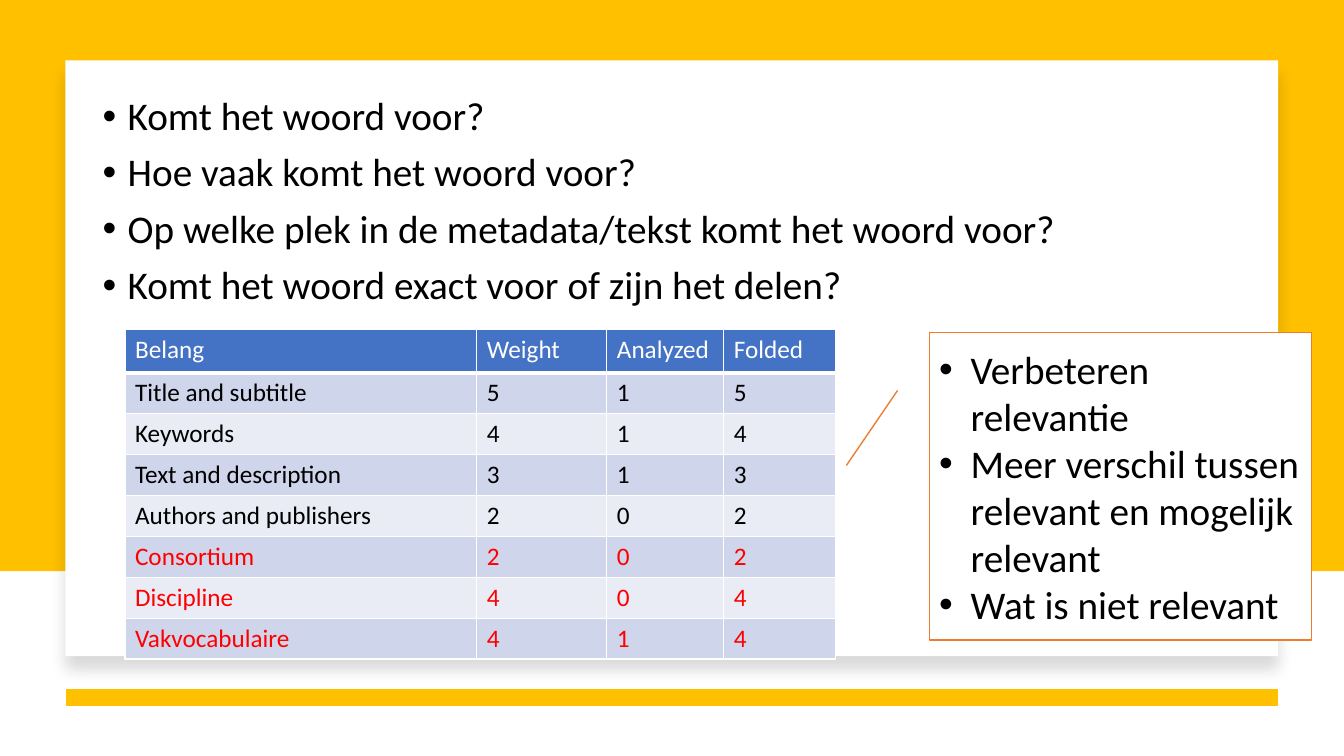
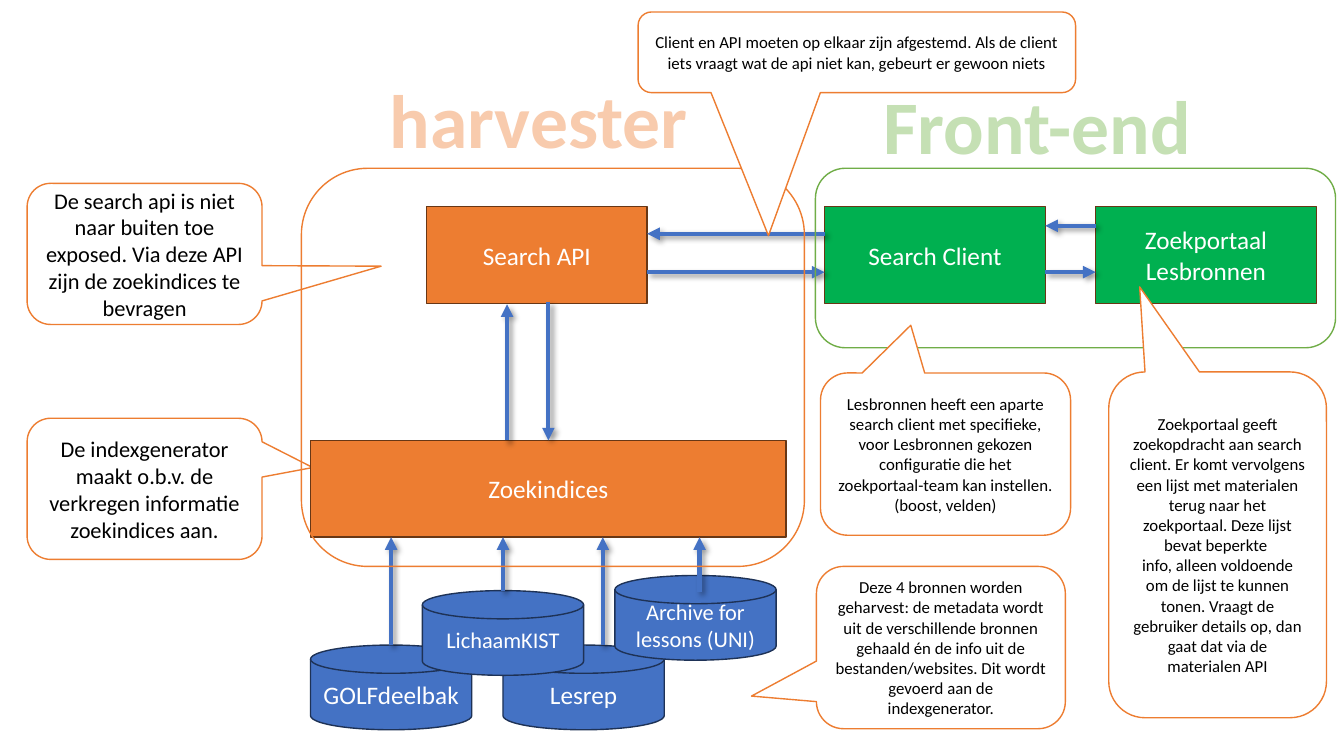
from lxml.etree import SubElement
from pptx import Presentation
from pptx.dml.color import RGBColor
from pptx.enum.shapes import MSO_CONNECTOR, MSO_SHAPE
from pptx.enum.text import MSO_ANCHOR, PP_ALIGN
from pptx.oxml import parse_xml
from pptx.oxml.ns import nsdecls, qn
from pptx.util import Pt

FONT = "Calibri"
BLACK = RGBColor(0, 0, 0)
WHITE = RGBColor(255, 255, 255)
RED = RGBColor(255, 0, 0)
GOLD = RGBColor(0xFF, 0xC0, 0x00)
BLUE = RGBColor(0x44, 0x72, 0xC4)
NAVY = RGBColor(0x1E, 0x32, 0x56)
ORANGE = RGBColor(0xED, 0x7D, 0x31)
BROWN = RGBColor(0x68, 0x37, 0x15)
GREEN = RGBColor(0x00, 0xB0, 0x50)
LEAF = RGBColor(0x70, 0xAD, 0x47)
PEACH = RGBColor(0xF8, 0xCB, 0xAD)
MINT = RGBColor(0xC5, 0xE0, 0xB4)
BANDS = (RGBColor(0xCF, 0xD5, 0xEA), RGBColor(0xE9, 0xEB, 0xF5))

ASKS = ["Komt het woord voor?", "Hoe vaak komt het woord voor?",
        "Op welke plek in de metadata/tekst komt het woord voor?",
        "Komt het woord exact voor of zijn het delen?"]
GOALS = ["Verbeteren relevantie",
         "Meer verschil tussen relevant en mogelijk relevant",
         "Wat is niet relevant"]
COLS = (251.3, 92.9, 83.5, 79.9)
ROWS = [("Belang", "Weight", "Analyzed", "Folded"),
        ("Title and subtitle", 5, 1, 5),
        ("Keywords", 4, 1, 4),
        ("Text and description", 3, 1, 3),
        ("Authors and publishers", 2, 0, 2),
        ("Consortium", 2, 0, 2),
        ("Discipline", 4, 0, 4),
        ("Vakvocabulaire", 4, 1, 4)]
HEAD_H, ROW_H = 31, 29.2
FIRST_RED = 5

BACK = [
    ("Deze 4 bronnen worden geharvest: de metadata wordt uit de verschillende "
     "bronnen gehaald én de info uit de bestanden/websites. Dit wordt gevoerd "
     "aan de indexgenerator.",
     (583.2, 404.6, 177.8, 115.9), (-0.761, 0.299), 12),
    ("De search api is niet naar buiten toe exposed. Via deze API zijn de "
     "zoekindices te bevragen",
     (19.4, 131, 167.8, 100.8), (1.007, 0.087), 16),
    ("De indexgenerator maakt o.b.v. de verkregen informatie zoekindices aan.",
     (19.4, 298.8, 167.8, 100.8), (0.716, -0.151), 16)]
FRONT = [
    ("Lesbronnen heeft een aparte search client met specifieke, voor Lesbronnen "
     "gekozen configuratie die het zoekportaal-team kan instellen. "
     "(boost, velden)",
     (586.1, 266.4, 178.6, 115.9), (-0.139, -0.794), 12),
    ("Zoekportaal geeft zoekopdracht aan search client. Er komt vervolgens een "
     "lijst met materialen terug naar het zoekportaal. Deze lijst bevat beperkte "
     "\vinfo, alleen voldoende om de lijst te kunnen tonen. Vraagt de gebruiker "
     "details op, dan gaat dat via de materialen API",
     (792, 265.7, 155.5, 247), (-0.358, -0.746), 12),
    ("Client en API moeten op elkaar zijn afgestemd. Als de client iets vraagt "
     "wat de api niet kan, gebeurt er gewoon niets",
     (455.8, 8.6, 312.5, 57.6), (-0.202, 2.274), 12)]
DISKS = [("GOLFdeelbak", 221.8, 460.8, 18), ("Lesrep", 359.3, 460.8, 18),
         ("LichaamKIST", 301.7, 421.9, 16),
         ("Archive for lessons (UNI)", 439.2, 411.1, 16)]
BOX_TOP, BOX_W, BOX_H = 147.6, 157.7, 69.1
INDEX = (221.8, 314.6, 339.8, BOX_H)
API_X, CLIENT_X, PORTAL_X = 304.6, 589, 782.6
BOXES = [("Zoekindices", INDEX, ORANGE),
         ("Search API", (API_X, BOX_TOP, BOX_W, BOX_H), ORANGE),
         ("Search Client", (CLIENT_X, BOX_TOP, BOX_W, BOX_H), GREEN),
         ("Zoekportaal Lesbronnen", (PORTAL_X, BOX_TOP, BOX_W, BOX_H), GREEN)]
FEEDS = [(279.4, 460.8), (430.6, 460.8), (359.3, 421.9), (499.7, 422.6)]
ZONES = [("harvester", (215.3, 120.2, 359.3, 284.4), ORANGE,
          (270, 48.2, 229.7, 72.7), PEACH, ORANGE),
         ("Front-end", (582.5, 120.2, 371.5, 128.2), LEAF,
          (622.1, 52.6, 237.6, 72.7), MINT, GREEN)]


def solid(tag, width, color):
    return parse_xml(f'<a:{tag} {nsdecls("a")} w="{int(Pt(width))}"><a:solidFill>'
                     f'<a:srgbClr val="{color}"/></a:solidFill></a:{tag}>')


def shade(item, alpha, blur, dist, angle):
    old = item._element.spPr.find(qn("a:effectLst"))
    if old is not None:
        item._element.spPr.remove(old)
    item._element.spPr.append(parse_xml(
        f'<a:effectLst {nsdecls("a")}><a:outerShdw blurRad="{int(Pt(blur))}" '
        f'dist="{int(Pt(dist))}" dir="{angle * 60000}" algn="ctr" rotWithShape="0">'
        f'<a:srgbClr val="000000"><a:alpha val="{alpha * 1000}"/></a:srgbClr>'
        '</a:outerShdw></a:effectLst>'))


def write(frame, text, size=18, color=BLACK, bold=False, align=PP_ALIGN.LEFT,
          indent=0, lead=None, gap=None, edge=None):
    lines = [text] if isinstance(text, str) else text
    for i, line in enumerate(lines):
        para = frame.add_paragraph() if i else frame.paragraphs[0]
        para.text = line
        para.alignment = align
        if lead:
            para.line_spacing = lead
        if gap:
            para.space_before = Pt(gap)
        if indent:
            props = para._p.get_or_add_pPr()
            props.set("marL", str(int(Pt(indent))))
            props.set("indent", str(-int(Pt(indent))))
            SubElement(props, qn("a:buFont")).set("typeface", "Arial")
            SubElement(props, qn("a:buChar")).set("char", "•")
        for run in para.runs:
            font = run.font
            font.name, font.size, font.bold = FONT, Pt(size), bold
            font.color.rgb = color
            if edge:
                run._r.get_or_add_rPr().insert(0, solid("ln", 1.75, edge))


def shape(slide, kind, box, fill=None, line=None, text=None, adj=(), **style):
    item = slide.shapes.add_shape(kind, *map(Pt, box))
    item.shadow.inherit = False
    for i, val in enumerate(adj):
        item.adjustments[i] = val
    if fill is None:
        item.fill.background()
    else:
        item.fill.solid()
        item.fill.fore_color.rgb = fill
    if line is None:
        item.line.fill.background()
    else:
        item.line.color.rgb = line
        item.line.width = Pt(1)
    if text:
        item.text_frame.word_wrap = True
        item.text_frame.vertical_anchor = MSO_ANCHOR.MIDDLE
        write(item.text_frame, text, **style)
    return item


def label(slide, box, text, wrap=True, **style):
    frame = slide.shapes.add_textbox(*map(Pt, box)).text_frame
    frame.word_wrap = wrap
    write(frame, text, **style)


def rule(slide, ends, color, width):
    item = slide.shapes.add_connector(MSO_CONNECTOR.STRAIGHT, *map(Pt, ends))
    item.line.color.rgb = color
    item.line.width = Pt(width)
    SubElement(item._element.spPr, qn("a:effectLst"))
    return item


def arrow(slide, *ends):
    item = rule(slide, ends, BLUE, 3)
    SubElement(item.line._get_or_add_ln(), qn("a:tailEnd")).set("type", "triangle")
    shade(item, 40, 4, 3, 45)
    return item


def notes(slide, items):
    for text, box, tip, size in items:
        shape(slide, MSO_SHAPE.ROUNDED_RECTANGULAR_CALLOUT, box, WHITE, ORANGE,
              text, adj=tip, size=size, align=PP_ALIGN.CENTER)


def grid(slide):
    high = HEAD_H + ROW_H * (len(ROWS) - 1)
    item = slide.shapes.add_table(len(ROWS), len(COLS), Pt(89.3), Pt(235.4),
                                  Pt(sum(COLS)), Pt(high))
    table = item.table
    table.first_row = table.horz_banding = False
    for col, width in zip(table.columns, COLS):
        col.width = Pt(width)
    for r, row in enumerate(ROWS):
        table.rows[r].height = Pt(ROW_H if r else HEAD_H)
        ink = WHITE if r == 0 else RED if r >= FIRST_RED else BLACK
        for c, val in enumerate(row):
            cell = table.cell(r, c)
            write(cell.text_frame, str(val), color=ink)
            cell.fill.solid()
            cell.fill.fore_color.rgb = BANDS[(r - 1) % 2] if r else BLUE
            props = cell._tc.get_or_add_tcPr()
            for i, side in enumerate(("lnL", "lnR", "lnT", "lnB")):
                width = 3 if r == 0 and side == "lnB" else 1
                props.insert(i, solid(side, width, WHITE))


def ranking(slide):
    shape(slide, MSO_SHAPE.RECTANGLE, (0, 0, 960, 408), GOLD)
    card = shape(slide, MSO_SHAPE.RECTANGLE, (46.8, 43.2, 866.2, 425.5), WHITE)
    shade(card, 15, 11, 10, 90)
    rule(slide, (913, 498.2, 46.8, 498.2), GOLD, 12)
    label(slide, (66.2, 65.5, 828, 373), ASKS, size=28, indent=18, lead=0.9, gap=10)
    grid(slide)
    shape(slide, MSO_SHAPE.LINE_CALLOUT_1, (663.8, 237.6, 272.9, 219.6), WHITE,
          ORANGE, GOALS, adj=(0.188, -0.083, 0.432, -0.217), size=28, indent=22.5)


def system(slide):
    mid = PP_ALIGN.CENTER
    notes(slide, BACK)
    for text, x, y, size in DISKS:
        shape(slide, MSO_SHAPE.FLOWCHART_MAGNETIC_DISK, (x, y, 115.2, 60.5), BLUE,
              NAVY, text, size=size, color=WHITE, align=mid)
    index, *_ = [shape(slide, MSO_SHAPE.RECTANGLE, box, fill, BROWN, text,
                       color=WHITE, align=mid) for text, box, fill in BOXES]
    top, base = INDEX[1], INDEX[1] + BOX_H
    for x, y in FEEDS:
        arrow(slide, x, y, x, base)
    arrow(slide, 362.2, top, 362.2, 217.4)
    arrow(slide, 391.7, 216, 391.7, top).end_connect(index, 0)
    for left, right, y in ((API_X, CLIENT_X, 167), (CLIENT_X, PORTAL_X, 161.3)):
        arrow(slide, right, y, left + BOX_W, y)
        arrow(slide, left + BOX_W, 194.4, right, 194.4)
    for text, box, line, spot, ink, edge in ZONES:
        shape(slide, MSO_SHAPE.ROUNDED_RECTANGLE, box, line=line)
        label(slide, spot, text, wrap=False, size=54, color=ink, bold=True,
              align=mid, edge=edge)
    notes(slide, FRONT)


def main():
    deck = Presentation()
    deck.slide_width, deck.slide_height = Pt(960), Pt(540)
    for build in (ranking, system):
        build(deck.slides.add_slide(deck.slide_layouts[6]))
    deck.save("out.pptx")


if __name__ == "__main__":
    main()
